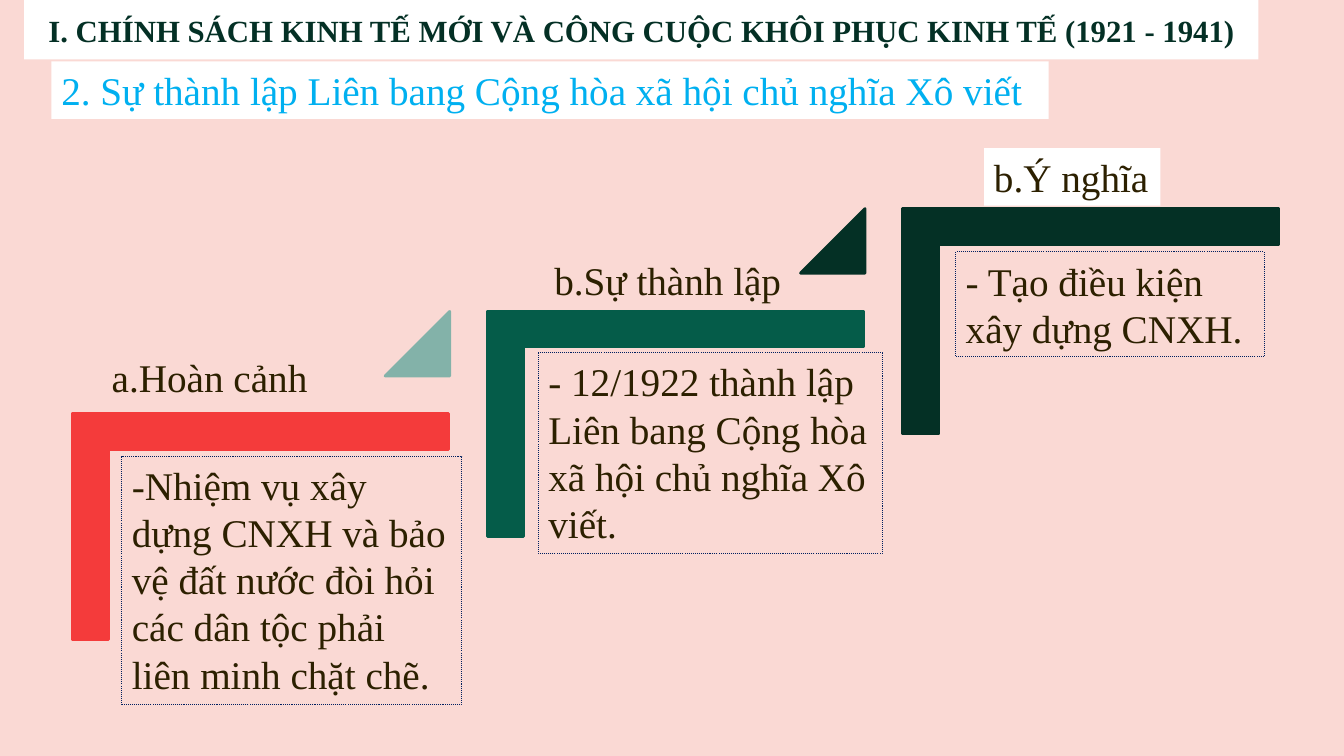
import pptx
import pptx.util
import pptx.dml.color
import pptx.enum.dml
import pptx.enum.shapes
import pptx.enum.text

Inches = pptx.util.Inches
Pt = pptx.util.Pt
SHAPE = pptx.enum.shapes.MSO_SHAPE
ALIGN = pptx.enum.text.PP_ALIGN
ANCHOR = pptx.enum.text.MSO_ANCHOR
FIT = pptx.enum.text.MSO_AUTO_SIZE

PINK, WHITE, RED = "FAD9D4", "FFFFFF", "F43B3B"
GREEN, DARK, SAGE = "055C49", "043025", "83B2A9"
SKY, BROWN, NAVY = "00B0F0", "2C2000", "002060"
STEP_X, STEP_Y = 4.12, -1.02


def paint(target, color):
    """Give a fill a solid colour."""
    target.solid()
    target.fore_color.rgb = pptx.dml.color.RGBColor.from_string(color)


def add_form(slide, kind, box, fill=None, line=None, width=2):
    form = slide.shapes.add_shape(kind, *map(Inches, box))
    form.shadow.inherit = False
    if fill:
        paint(form.fill, fill)
    else:
        form.fill.background()
    if line:
        paint(form.line.fill, line)
        form.line.width = Pt(width)
    else:
        form.line.fill.background()
    return form


def set_text(form, text, color=BROWN, size=28, wrap=False):
    frame = form.text_frame
    frame.text = text
    frame.word_wrap = wrap
    frame.auto_size = FIT.SHAPE_TO_FIT_TEXT
    frame.vertical_anchor = ANCHOR.TOP
    para = frame.paragraphs[0]
    para.alignment = ALIGN.LEFT
    font = para.runs[0].font
    font.name = "Times New Roman"
    font.size = Pt(size)
    paint(font.fill, color)


def add_title(slide, text):
    form = add_form(slide, SHAPE.RECTANGLE, (0.24, 0, 12.24, 0.59), WHITE)
    set_text(form, text, DARK, 22, True)
    frame = form.text_frame
    frame.auto_size = FIT.NONE
    frame.vertical_anchor = ANCHOR.MIDDLE
    frame.paragraphs[0].alignment = ALIGN.CENTER
    frame.paragraphs[0].runs[0].font.bold = True


def add_label(slide, text, box, color=BROWN, fill=None):
    set_text(add_form(slide, SHAPE.RECTANGLE, box, fill), text, color)


def add_note(slide, text, box):
    form = add_form(slide, SHAPE.RECTANGLE, box, None, NAVY, 0.75)
    form.line.dash_style = pptx.enum.dml.MSO_LINE.ROUND_DOT
    set_text(form, text, wrap=True)


def add_stair(slide, index, color):
    """Draw one corner of the staircase, each further right and higher."""
    box = (1.46 + index * STEP_X, 3.36 + index * STEP_Y, 2.24, 3.73)
    form = add_form(slide, SHAPE.CORNER, box, color, color)
    form.rotation = 90
    form.adjustments[0] = form.adjustments[1] = 0.16


def add_wedge(slide, index, color):
    """Draw the triangle that leads up to the next stair."""
    box = (3.82 + index * STEP_X, 3.09 + index * STEP_Y, 0.64, 0.64)
    form = add_form(slide, SHAPE.ISOSCELES_TRIANGLE, box, color, color)
    form.adjustments[0] = 1


def main():
    deck = pptx.Presentation()
    deck.slide_width, deck.slide_height = Inches(13.33), Inches(7.5)
    slide = deck.slides.add_slide(deck.slide_layouts[6])
    paint(slide.background.fill, PINK)

    add_title(slide, "I. CHÍNH SÁCH KINH TẾ MỚI VÀ CÔNG CUỘC KHÔI PHỤC "
                     "KINH TẾ (1921 - 1941)")
    add_label(slide, "2. Sự thành lập Liên bang Cộng hòa xã hội chủ nghĩa Xô viết",
              (0.51, 0.61, 9.89, 0.57), SKY, WHITE)

    for index, color in enumerate((RED, GREEN, DARK)):
        add_stair(slide, index, color)
    for index, color in enumerate((SAGE, DARK)):
        add_wedge(slide, index, color)

    add_label(slide, "a.Hoàn cảnh", (1.01, 3.46, 2.16, 0.57))
    add_label(slide, "b.Sự thành lập", (5.4, 2.49, 2.47, 0.57))
    add_label(slide, "b.Ý nghĩa", (9.76, 1.47, 1.75, 0.57), fill=WHITE)

    add_note(slide, "-Nhiệm vụ xây dựng CNXH và bảo vệ đất nước đòi hỏi "
                    "các dân tộc phải liên minh chặt chẽ.",
             (1.21, 4.53, 3.37, 2.46))
    add_note(slide, "- 12/1922 thành lập Liên bang Cộng hòa xã hội chủ nghĩa Xô viết.",
             (5.34, 3.5, 3.41, 1.99))
    add_note(slide, "- Tạo điều kiện xây dựng CNXH.", (9.48, 2.5, 3.06, 1.04))

    deck.save("out.pptx")


if __name__ == "__main__":
    main()
